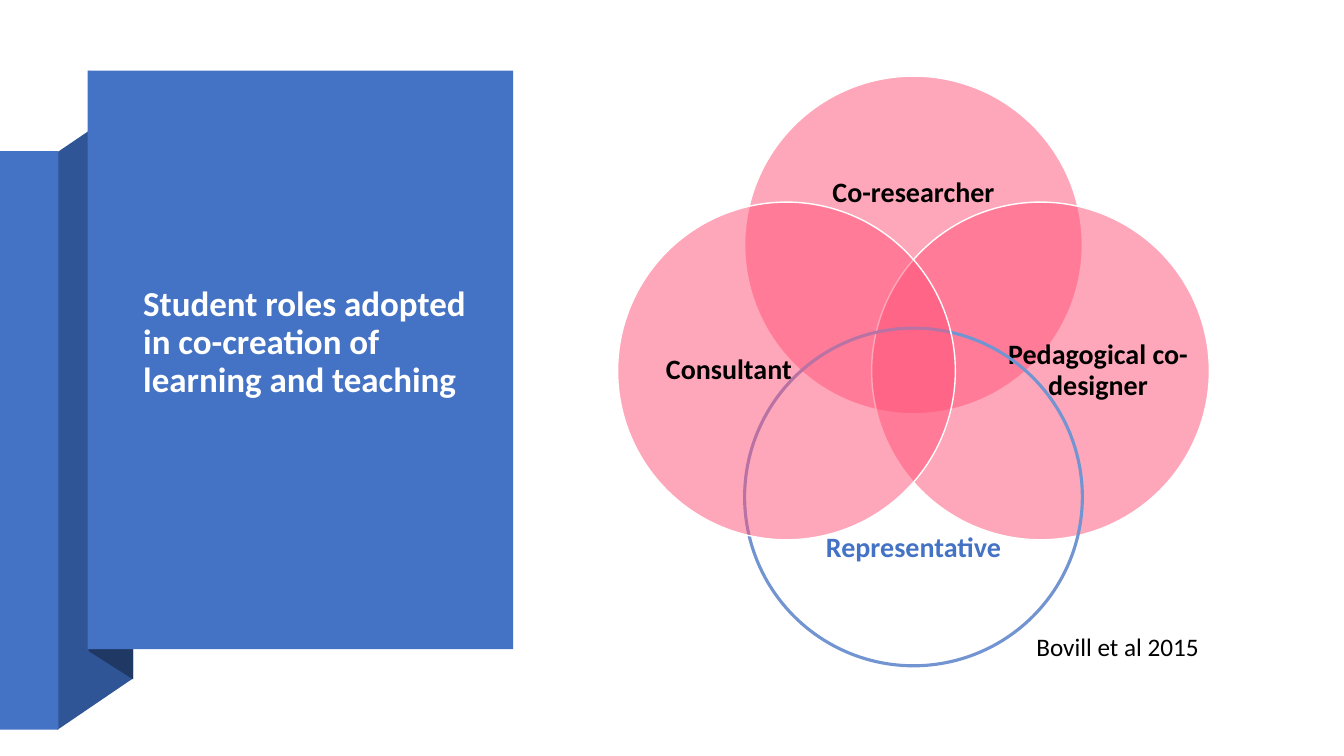
from lxml.etree import SubElement
from pptx import Presentation
from pptx.dml.color import RGBColor
from pptx.enum.shapes import MSO_SHAPE
from pptx.enum.text import MSO_ANCHOR, MSO_AUTO_SIZE, PP_ALIGN
from pptx.oxml.ns import qn
from pptx.util import Pt

PX = 9144
BLUE, PINK, WHITE, BLACK = "4472C4", "FF5177", "FFFFFF", "000000"
SIZE, MID_X, MID_Y = 335, 906, 368
STEP_X, STEP_Y = 126, 125
ROLES = [
    ("Co-researcher", 0, -1, True),
    ("Pedagogical co-designer", 1, 0, True),
    ("Representative", 0, 1, False),
    ("Consultant", -1, 0, True),
]


def px(*nums):
    """Turn px lengths into EMU."""
    return [round(num * PX) for num in nums]


def paint(target, color):
    """Give a fill, font or line format a solid colour."""
    if hasattr(target, "solid"):
        target.solid()
        target.fore_color.rgb = RGBColor.from_string(color)
    else:
        target.color.rgb = RGBColor.from_string(color)


def flat(shape, color):
    """Fill a shape plainly, with no outline or shadow."""
    shape.shadow.inherit = False
    paint(shape.fill, color)
    shape.line.fill.background()


def panel(slide, *box):
    """Draw a blue rectangle."""
    flat(slide.shapes.add_shape(MSO_SHAPE.RECTANGLE, *px(*box)), BLUE)


def fold(slide, color, *points):
    """Draw a slanted side of the ribbon."""
    outline = slide.shapes.build_freeform(*points[0], scale=PX)
    outline.add_line_segments(points[1:], close=True)
    flat(outline.convert_to_shape(), color)


def write(shape, text, size, color, bold=False, align=PP_ALIGN.LEFT,
          anchor=MSO_ANCHOR.MIDDLE, space=None):
    """Set one formatted paragraph in a shape."""
    frame = shape.text_frame
    frame.word_wrap = True
    frame.auto_size = MSO_AUTO_SIZE.NONE
    frame.vertical_anchor = anchor
    para = frame.paragraphs[0]
    para.text = text
    para.alignment = align
    para.line_spacing = space
    font = para.font
    font.name, font.size, font.bold = "Calibri", Pt(size), bold
    paint(font, color)


def role(slide, text, dx, dy, filled):
    """Draw one circle of the Venn diagram and its label."""
    x, y = MID_X + STEP_X * dx, MID_Y + STEP_Y * dy
    ring = slide.shapes.add_shape(
        MSO_SHAPE.OVAL, *px(x - SIZE / 2, y - SIZE / 2, SIZE, SIZE))
    ring.shadow.inherit = False
    if filled:
        paint(ring.fill, PINK)
        tint = ring.fill._xPr.find(qn("a:solidFill"))[0]
        SubElement(tint, qn("a:alpha"), val="50000")
    else:
        ring.fill.background()
    paint(ring.line, WHITE if filled else "7295D2")
    ring.line.width = Pt(1 if filled else 2.25)

    wide, high = 183 if dx else 277, 166
    label = slide.shapes.add_textbox(
        *px(x + 57 * dx - wide / 2, y + 51 * dy - high / 2, wide, high))
    frame = label.text_frame
    frame.margin_left = frame.margin_right = 0
    write(label, text, 20, BLACK if filled else BLUE, True,
          PP_ALIGN.CENTER, space=0.9)


def main():
    """Build the slide and save it."""
    deck = Presentation()
    deck.slide_width, deck.slide_height = px(1333, 750)
    slide = deck.slides.add_slide(deck.slide_layouts[5])

    fold(slide, "2F5597", (57, 724), (132, 673), (132, 100), (57, 151))
    panel(slide, 0, 150, 58, 574)
    fold(slide, "203864", (88, 646), (132, 674), (132, 99), (88, 70))
    panel(slide, 87, 70, 422, 574)

    title = slide.shapes.title
    title.left, title.top, title.width, title.height = px(132, 260, 348, 161)
    write(title, "Student roles adopted in co-creation of learning and teaching",
          25, WHITE, True, space=0.9)
    title.element.getparent().append(title.element)

    source = slide.shapes.add_textbox(*px(1018, 621, 185, 40))
    write(source, "Bovill et al 2015", 18, BLACK, anchor=MSO_ANCHOR.TOP)

    for item in ROLES:
        role(slide, *item)
    deck.save("out.pptx")


if __name__ == "__main__":
    main()
